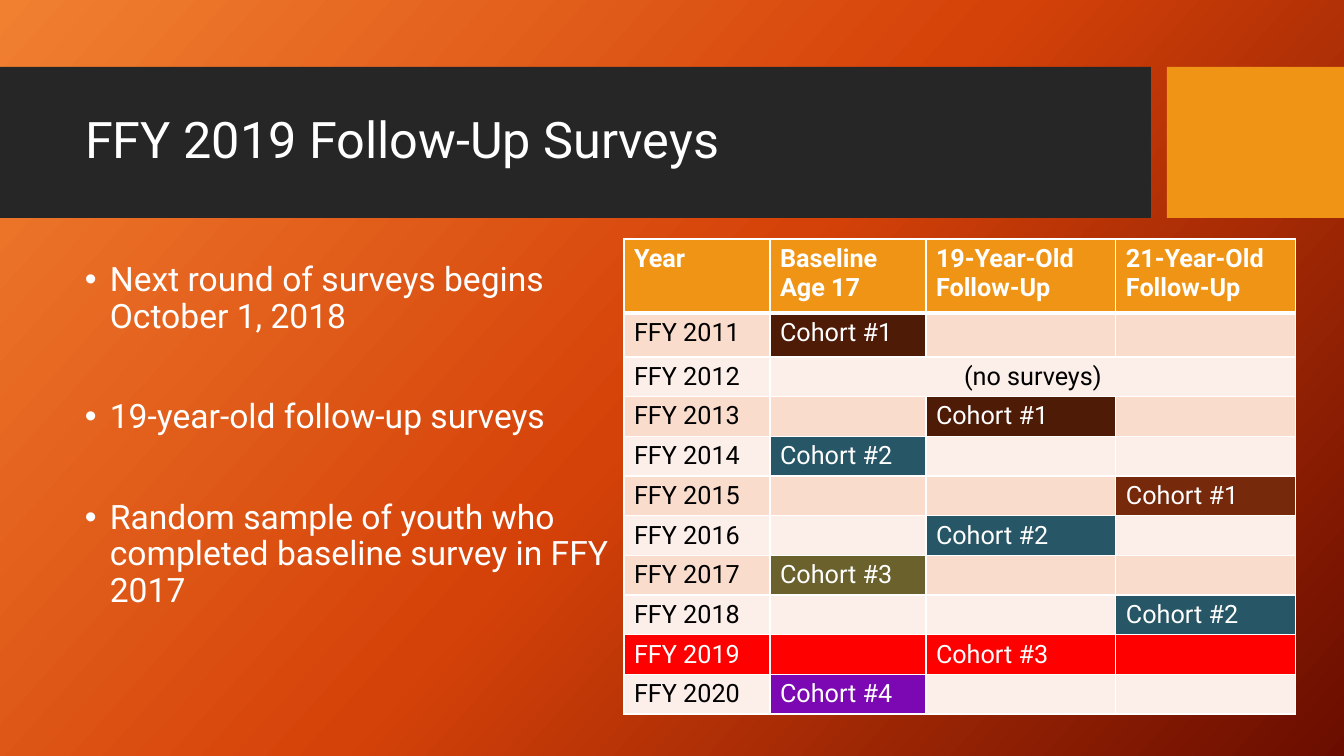
import copy

import pptx
import pptx.dml.color
import pptx.enum.shapes
import pptx.enum.text
import pptx.oxml
import pptx.oxml.ns
import pptx.util

qn = pptx.oxml.ns.qn
ALIGN = pptx.enum.text.PP_ALIGN
ANCHOR = pptx.enum.text.MSO_ANCHOR


def px(length):
    return round(length * 12192000 / 1344)


def rgb(value):
    return pptx.dml.color.RGBColor.from_string(value)


deck = pptx.Presentation()
deck.slide_width, deck.slide_height = px(1344), px(756)
slide = deck.slides.add_slide(deck.slide_layouts[5])

backdrop = slide.background.fill
backdrop.gradient()
backdrop.gradient_angle = 318
stops = slide.element.find(".//" + qn("a:gsLst"))
stops.append(copy.deepcopy(stops[-1]))
for stop, (position, color) in zip(
    backdrop.gradient_stops, [(0, "F18031"), (0.5, "D54209"), (1, "6A0D00")]
):
    stop.position = position
    stop.color.rgb = rgb(color)

for left, width, color in [(0, 1151, "262626"), (1167, 177, "F09415")]:
    band = slide.shapes.add_shape(
        pptx.enum.shapes.MSO_SHAPE.RECTANGLE, px(left), px(67), px(width), px(151)
    )
    band.shadow.inherit = False
    band.fill.solid()
    band.fill.fore_color.rgb = rgb(color)
    band.line.fill.background()

headline = slide.shapes.title
slide.shapes.element.append(headline._element)
points = slide.shapes.add_textbox(px(75), px(258), px(549), px(397))
for box, place in [(headline, (75, 83, 1059, 119)), (points, (75, 258, 549, 397))]:
    for side, length in zip(("left", "top", "width", "height"), place):
        setattr(box, side, px(length))
    box.text_frame.word_wrap = True
    box.text_frame.auto_size = pptx.enum.text.MSO_AUTO_SIZE.NONE
headline.text_frame.text = "FFY 2019 Follow-Up Surveys"
headline.text_frame.vertical_anchor = ANCHOR.MIDDLE
points.text_frame.text = "\n".join([
    "Next round of surveys begins October 1, 2018",
    "19-year-old follow-up surveys",
    "Random sample of youth who completed baseline survey in FFY 2017",
])

for index, point in enumerate(points.text_frame.paragraphs):
    if index:
        point.space_before = pptx.util.Pt(46)
    layout = point._p.get_or_add_pPr()
    layout.set("marL", str(px(25)))
    layout.set("indent", str(-px(25)))
    for tag, key, value in [("a:buFont", "typeface", "Arial"), ("a:buChar", "char", "•")]:
        bullet = pptx.oxml.parse_xml(f"<{tag} {pptx.oxml.ns.nsdecls('a')}/>")
        bullet.set(key, value)
        layout.append(bullet)

for box, size in [(headline, 36), (points, 24)]:
    for paragraph in box.text_frame.paragraphs:
        paragraph.alignment = ALIGN.LEFT
        paragraph.line_spacing = 0.9
        font = paragraph.runs[0].font
        for key, value in {"name": "Roboto", "size": pptx.util.Pt(size)}.items():
            setattr(font, key, value)
        font.color.rgb = rgb("FFFFFF")

headings = ["Year", "Baseline\nAge 17", "19-Year-Old\nFollow-Up", "21-Year-Old\nFollow-Up"]
surveys = {
    2011: (1, "Cohort #1", "4E1B07"),
    2012: (1, "(no surveys)", "FCEEE8"),
    2013: (2, "Cohort #1", "4E1B07"),
    2014: (1, "Cohort #2", "275666"),
    2015: (3, "Cohort #1", "76290B"),
    2016: (2, "Cohort #2", "275666"),
    2017: (1, "Cohort #3", "6A612C"),
    2018: (3, "Cohort #2", "275666"),
    2019: (2, "Cohort #3", "FF0000"),
    2020: (1, "Cohort #4", "7C08B3"),
}
column_widths = [146, 156, 190, 180]
row_heights = [74, 44] + [39] * 9
schedule = slide.shapes.add_table(
    len(row_heights), len(column_widths),
    px(624), px(239), px(sum(column_widths)), px(sum(row_heights)),
).table
for column, width in zip(schedule.columns, column_widths):
    column.width = px(width)
for row, height in zip(schedule.rows, row_heights):
    row.height = px(height)

grid = [[(heading, "F09415", "FFFFFF") for heading in headings]]
for year, (survey_column, cohort, color) in surveys.items():
    current = year == 2019
    stripe = "FF0000" if current else "F9DCCC" if year % 2 else "FCEEE8"
    cells = [(f"FFY {year}", stripe, "FFFFFF" if current else "000000")]
    cells += [("", stripe, "000000")] * 3
    cells[survey_column] = (cohort, color, "000000" if year == 2012 else "FFFFFF")
    grid.append(cells)

for row_index, cells in enumerate(grid):
    for column_index, (words, color, ink) in enumerate(cells):
        cell = schedule.cell(row_index, column_index)
        borders = {"L": 1, "R": 1, "T": 3 if row_index == 1 else 1, "B": 1 if row_index else 3}
        for side, points_wide in borders.items():
            cell._tc.get_or_add_tcPr().append(pptx.oxml.parse_xml(
                f'<a:ln{side} {pptx.oxml.ns.nsdecls("a")} w="{points_wide * 12700}">'
                f'<a:solidFill><a:srgbClr val="FFFFFF"/></a:solidFill></a:ln{side}>'
            ))
        cell.fill.solid()
        cell.fill.fore_color.rgb = rgb(color)
        cell.text_frame.text = words
        for paragraph in cell.text_frame.paragraphs:
            if not words:
                paragraph._p.get_or_add_endParaRPr().set("sz", "1200")
            for run in paragraph.runs:
                style = {"name": "Roboto", "size": pptx.util.Pt(18), "bold": row_index == 0}
                for key, value in style.items():
                    setattr(run.font, key, value)
                run.font.color.rgb = rgb(ink)

no_surveys = schedule.cell(2, 1)
no_surveys.merge(schedule.cell(2, 3))
no_surveys.text_frame.paragraphs[0].alignment = ALIGN.CENTER

deck.save("out.pptx")
